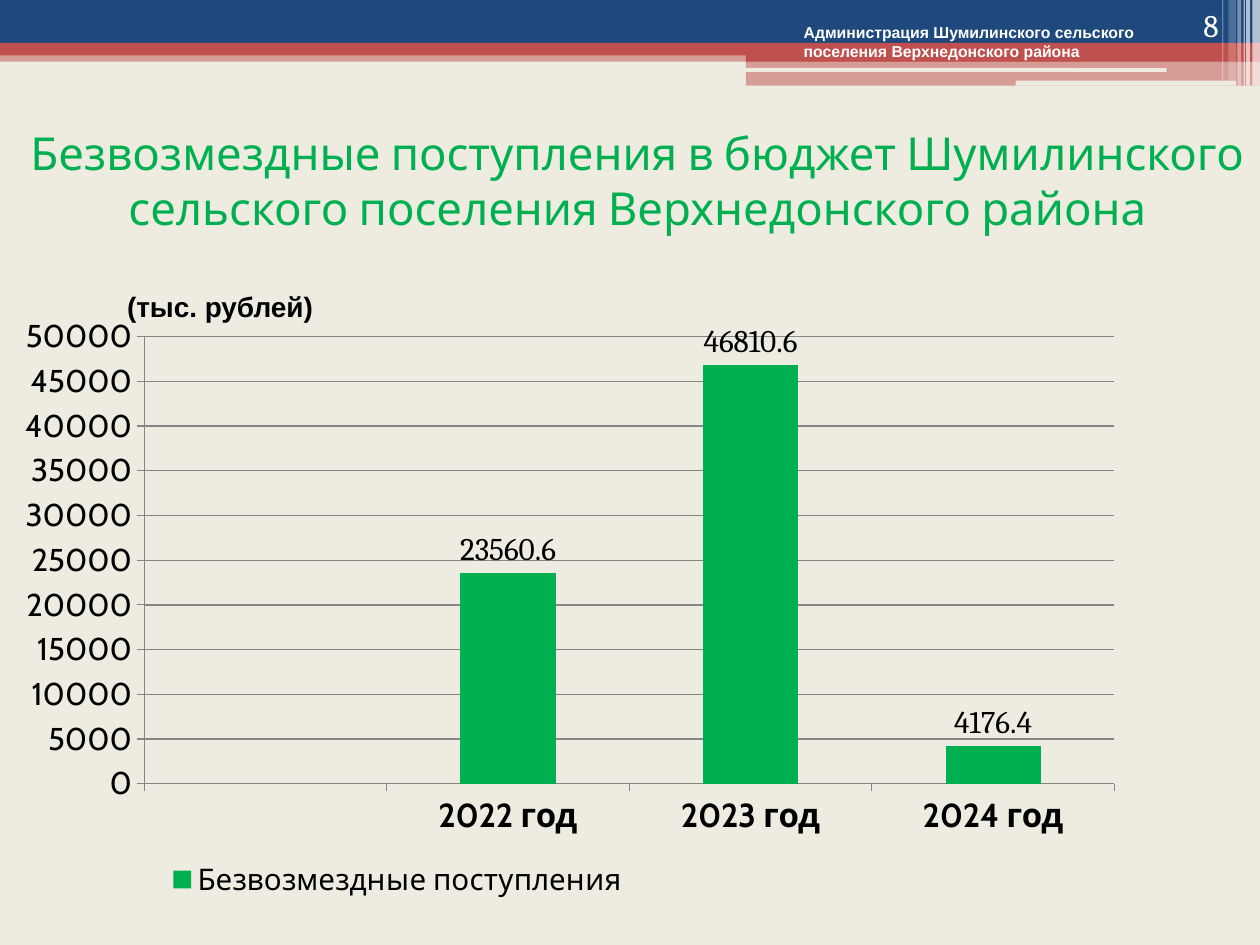
from lxml.etree import SubElement
from pptx import Presentation
from pptx.chart.data import CategoryChartData
from pptx.dml.color import RGBColor
from pptx.enum.chart import XL_CHART_TYPE, XL_LABEL_POSITION, XL_LEGEND_POSITION, XL_TICK_MARK
from pptx.enum.shapes import MSO_SHAPE
from pptx.enum.text import MSO_ANCHOR, PP_ALIGN
from pptx.oxml import parse_xml
from pptx.oxml.ns import nsdecls, qn
from pptx.util import Inches, Pt

NAVY, RED, CREAM, WHITE = "1F497D", "C0504D", "EEECE1", "FFFFFF"
GREEN, BLACK, GREY = "00B050", "000000", "868686"

# left, top, width, height, colour, opacity in percent
BANDS = [
    (0, 0.4, 10, 0.09, RED, 50),
    (0, 0, 10, 0.34, NAVY, 100),
    (0, 0.34, 10, 0.1, RED, 100),
    (5.92, 0.39, 4.08, 0.1, RED, 100),
    (5.92, 0.48, 4.08, 0.2, RED, 50),
]
NOTCHES = [(5.91, 0.54, 3.35, 0.03), (8.06, 0.64, 1.75, 0.04)]
# left, width, height, opacity in percent
STRIPES = [
    (9.94, 0.06, 0.68, 65),
    (9.89, 0.03, 0.68, 65),
    (9.87, 0.01, 0.68, 60),
    (9.82, 0.03, 0.68, 40),
    (9.75, 0.06, 0.64, 20),
    (9.7, 0.01, 0.64, 30),
]


def paint(color_format, color):
    color_format.rgb = RGBColor.from_string(color)


def style_font(font, color=BLACK, **values):
    for name, value in values.items():
        setattr(font, name, value)
    paint(font.color, color)


def add_bar(page, left, top, width, height, color, opacity=100, kind=MSO_SHAPE.RECTANGLE):
    bar = page.shapes.add_shape(kind, Inches(left), Inches(top), Inches(width), Inches(height))
    bar.shadow.inherit = False
    bar.line.fill.background()
    bar.fill.solid()
    paint(bar.fill.fore_color, color)
    if opacity < 100:
        color_node = bar.fill._xPr.find(qn("a:solidFill"))[0]
        SubElement(color_node, qn("a:alpha"), val=str(opacity * 1000))


def add_text(page, text, left, top, width, height, align=PP_ALIGN.LEFT,
             anchor=MSO_ANCHOR.TOP, **font):
    box = page.shapes.add_textbox(Inches(left), Inches(top), Inches(width), Inches(height))
    frame = box.text_frame
    frame.word_wrap = True
    frame.vertical_anchor = anchor
    para = frame.paragraphs[0]
    para.alignment = align
    span = para.add_run()
    span.text = text
    style_font(span.font, **font)


def set_layout(element, **places):
    """Place a chart part by fractions of the chart area."""
    for old in element.findall(qn("c:layout")):
        element.remove(old)
    nodes = "".join(f'<c:{name} val="{value}"/>' for name, value in places.items())
    layout = parse_xml(
        f'<c:layout {nsdecls("c")}><c:manualLayout>{nodes}</c:manualLayout></c:layout>')
    if element.tag == qn("c:legend"):
        element.find(qn("c:legendPos")).addnext(layout)
    else:
        element.insert(0, layout)


def style_axis(axis, **font):
    axis.major_tick_mark = XL_TICK_MARK.OUTSIDE
    axis.minor_tick_mark = XL_TICK_MARK.NONE
    paint(axis.format.line.color, GREY)
    style_font(axis.tick_labels.font, name="Cabin", **font)


def add_income_chart(page):
    data = CategoryChartData()
    data.categories = ["", "2022 год", "2023 год", "2024 год"]
    data.add_series("Безвозмездные поступления", [None, 23560.6, 46810.6, 4176.4])
    chart = page.shapes.add_chart(
        XL_CHART_TYPE.COLUMN_CLUSTERED, Inches(0.2), Inches(2.46),
        Inches(8.82), Inches(4.73), data).chart
    chart.has_title = False
    style_font(chart.font, name="Cambria", size=Pt(18))

    # Columns and their values
    plot = chart.plots[0]
    plot.gap_width = 155
    plot.vary_by_categories = False
    fill = plot.series[0].format.fill
    fill.solid()
    paint(fill.fore_color, GREEN)
    plot.has_data_labels = True
    labels = plot.data_labels
    labels.show_value = True
    labels.position = XL_LABEL_POSITION.OUTSIDE_END
    style_font(labels.font, name="Cambria", size=Pt(18))

    # Axes
    style_axis(chart.category_axis, size=Pt(19), bold=True)
    scale = chart.value_axis
    style_axis(scale, size=Pt(18))
    scale.minimum_scale, scale.maximum_scale, scale.major_unit = 0, 50000, 5000
    scale.has_major_gridlines = True
    paint(scale.major_gridlines.format.line.color, GREY)

    # Legend and placement
    chart.has_legend = True
    legend = chart.legend
    legend.position = XL_LEGEND_POSITION.BOTTOM
    legend.include_in_layout = False
    style_font(legend.font, name="Cabin", size=Pt(17))
    set_layout(legend._element, xMode="edge", yMode="edge", x=0.09, y=0.92, w=0.48, h=0.08)
    set_layout(chart._chartSpace.chart.plotArea, layoutTarget="inner",
               xMode="edge", yMode="edge", x=0.1, y=0.045, w=0.88, h=0.75)


def add_header(page):
    for band in BANDS:
        add_bar(page, *band)
    for notch in NOTCHES:
        add_bar(page, *notch, CREAM, kind=MSO_SHAPE.ROUNDED_RECTANGLE)
    for left, width, height, opacity in STRIPES:
        add_bar(page, left, 0, width, height, WHITE, opacity)


def main():
    deck = Presentation()
    deck.slide_width, deck.slide_height = Inches(10), Inches(7.5)
    page = deck.slides.add_slide(deck.slide_layouts[6])
    page.background.fill.solid()
    paint(page.background.fill.fore_color, CREAM)

    add_header(page)
    add_text(page, "Безвозмездные поступления в бюджет Шумилинского "
             "сельского поселения Верхнедонского района", 0.12, 0.84, 9.88, 1.17,
             PP_ALIGN.CENTER, MSO_ANCHOR.MIDDLE, name="Cabin", size=Pt(26), color=GREEN)
    add_income_chart(page)
    add_text(page, "8", 8.94, 0, 0.83, 0.4, PP_ALIGN.RIGHT, MSO_ANCHOR.BOTTOM,
             name="Cambria", size=Pt(18), color=WHITE)
    add_text(page, "(тыс. рублей)", 0.91, 2.25, 1.81, 0.37,
             name="Arial", size=Pt(16), bold=True)
    add_text(page, "Администрация Шумилинского сельского поселения Верхнедонского района",
             6.28, 0.13, 3.11, 0.4, name="Arial", size=Pt(9), bold=True, color=WHITE)
    deck.save("out.pptx")


if __name__ == "__main__":
    main()
